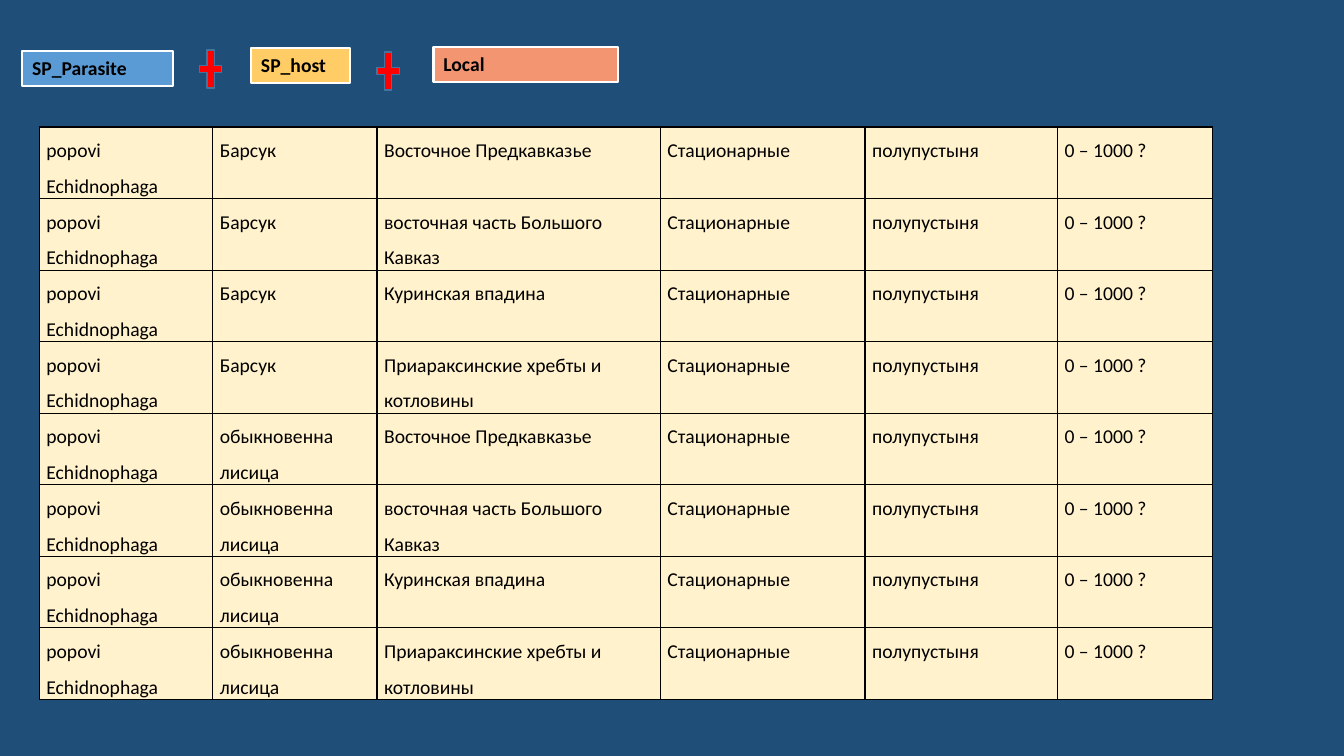
from itertools import product

from lxml.etree import SubElement
from pptx import Presentation
from pptx.dml.color import RGBColor
from pptx.enum.shapes import MSO_SHAPE
from pptx.enum.text import MSO_ANCHOR, MSO_AUTO_SIZE, PP_ALIGN
from pptx.oxml.ns import qn
from pptx.util import Inches, Pt

NAVY = RGBColor(0x1F, 0x4E, 0x79)
CREAM = RGBColor(0xFF, 0xF2, 0xCC)
BLUE = RGBColor(0x5B, 0x9B, 0xD5)
YELLOW = RGBColor(0xFF, 0xCC, 0x66)
SALMON = RGBColor(0xF2, 0x95, 0x70)
RED = RGBColor(0xFF, 0x00, 0x00)
STEEL = RGBColor(0x43, 0x73, 0x9E)
WHITE = RGBColor(0xFF, 0xFF, 0xFF)
BLACK = RGBColor(0x00, 0x00, 0x00)


def write(frame, text, bold=False, spacing=None):
    paragraph = frame.paragraphs[0]
    paragraph.alignment = PP_ALIGN.LEFT
    paragraph.line_spacing = spacing
    run = paragraph.add_run()
    run.text = text
    run.font.name = "Calibri"
    run.font.size = Pt(14)
    run.font.bold = bold
    run.font.color.rgb = BLACK


def add_figure(kind, left, top, width, height, fill, line, weight):
    figure = slide.shapes.add_shape(
        kind, Inches(left), Inches(top), Inches(width), Inches(height))
    figure.shadow.inherit = False
    figure.fill.solid()
    figure.fill.fore_color.rgb = fill
    figure.line.color.rgb = line
    figure.line.width = Pt(weight)
    return figure


prs = Presentation()
prs.slide_width = Inches(13.33)
prs.slide_height = Inches(7.5)
slide = prs.slides.add_slide(prs.slide_layouts[6])
slide.background.fill.solid()
slide.background.fill.fore_color.rgb = NAVY

# Records: every host combined with every locality
hosts = ["Барсук", "обыкновенна лисица"]
localities = [
    "Восточное Предкавказье",
    "восточная часть Большого Кавказ",
    "Куринская впадина",
    "Приараксинские хребты и котловины",
]
records = [
    ("popovi Echidnophaga", host, locality, "Стационарные", "полупустыня", "0 – 1000 ?")
    for host, locality in product(hosts, localities)
]

# Table of records
column_widths = [1.72, 1.63, 2.81, 2.03, 1.91, 1.54]
row_height = 0.67
records_table = slide.shapes.add_table(
    len(records), len(column_widths), Inches(0.39), Inches(1.26),
    Inches(sum(column_widths)), Inches(row_height * len(records))).table
records_table.first_row = False
records_table.horz_banding = False
for column, width in zip(records_table.columns, column_widths):
    column.width = Inches(width)

for row, record in zip(records_table.rows, records):
    row.height = Inches(row_height)
    for cell, value in zip(row.cells, record):
        cell.margin_left = cell.margin_right = Inches(0.07)
        cell.margin_top = cell.margin_bottom = 0
        write(cell.text_frame, value, spacing=1.5)
        # Borders come before the fill in the cell properties
        properties = cell._tc.get_or_add_tcPr()
        for side in ("a:lnL", "a:lnR", "a:lnT", "a:lnB"):
            border = SubElement(properties, qn(side), w=str(Pt(1)))
            border_fill = SubElement(border, qn("a:solidFill"))
            SubElement(border_fill, qn("a:srgbClr"), val=str(BLACK))
        cell.fill.solid()
        cell.fill.fore_color.rgb = CREAM

# Key fields
key_fields = [
    ("SP_Parasite", 0.22, 0.51, 1.5, BLUE),
    ("SP_host", 2.49, 0.48, 0.98, YELLOW),
    ("Local", 4.3, 0.47, 1.83, SALMON),
]
for name, left, top, width, color in key_fields:
    key_field = add_figure(MSO_SHAPE.RECTANGLE, left, top, width, 0.34, color, WHITE, 1.5)
    key_field.text_frame.word_wrap = True
    key_field.text_frame.auto_size = MSO_AUTO_SIZE.SHAPE_TO_FIT_TEXT
    key_field.text_frame.vertical_anchor = MSO_ANCHOR.TOP
    write(key_field.text_frame, name, bold=True)

# Plus signs between the fields
for left, top in [(1.94, 0.43), (3.7, 0.45)]:
    add_figure(MSO_SHAPE.MATH_PLUS, left, top, 0.3, 0.51, RED, STEEL, 1)

prs.save("out.pptx")
